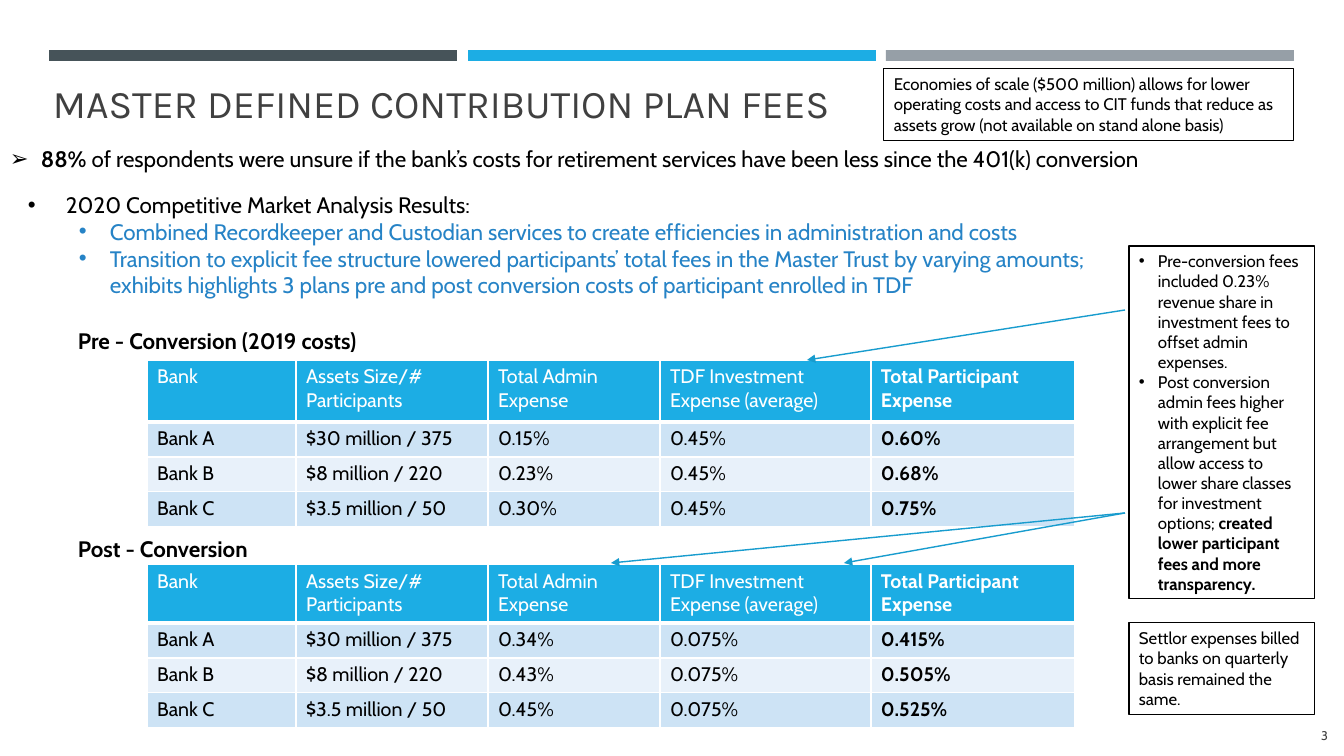
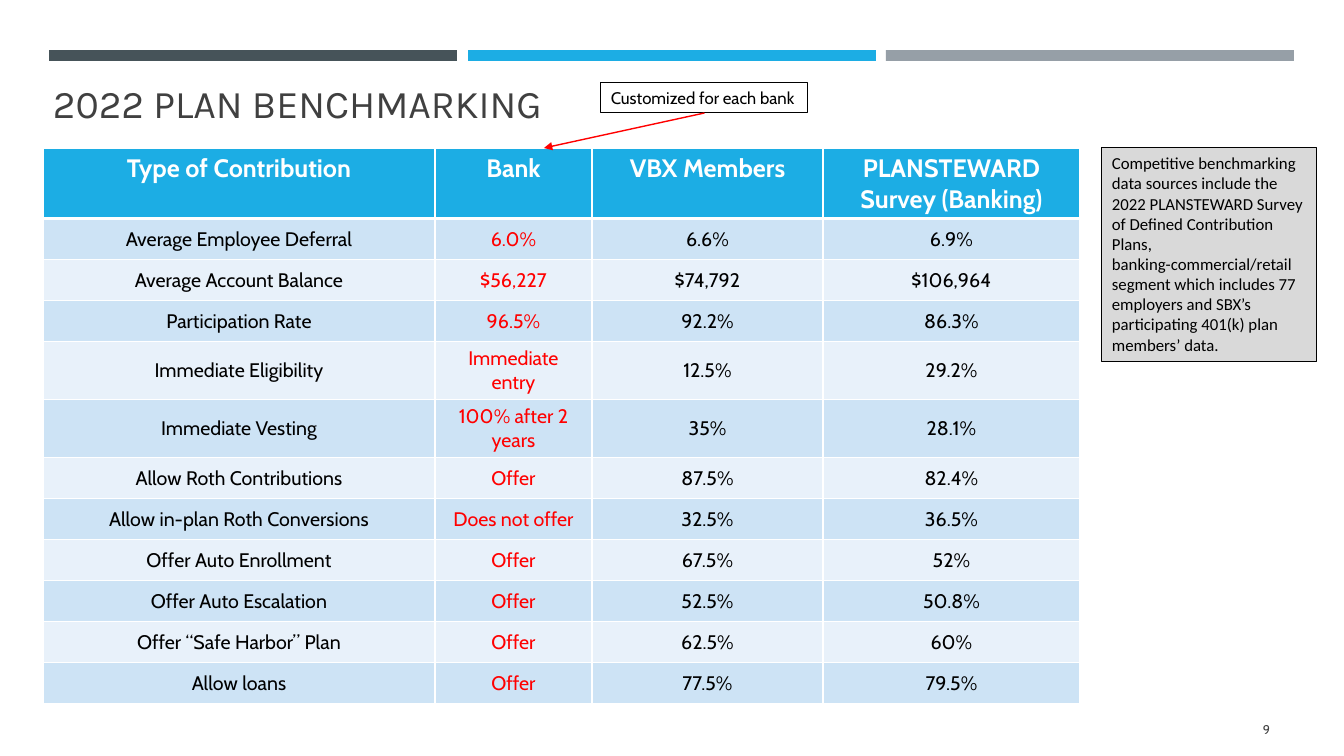
from lxml.etree import SubElement
from pptx import Presentation
from pptx.dml.color import RGBColor
from pptx.enum.shapes import MSO_CONNECTOR, MSO_SHAPE
from pptx.enum.text import MSO_ANCHOR, PP_ALIGN
from pptx.oxml.ns import qn
from pptx.util import Emu, Pt

PX = 914400 / 100.8
BLACK, WHITE, GREY, RED = "000000", "FFFFFF", "404040", "FF0000"
ACCENT, LINK, ARROW, NOTE = "1CADE4", "2683C6", "189CCE", "D9D9D9"
STRIPES = ("CDE3F5", "E8F1FA")
BANDS = [("465359", 49), (ACCENT, 468), ("969FA7", 886)]

# A paragraph is a list of (text, bold) runs plus optional format values.
SURVEY = [dict(runs=[("88% ", True), ("of respondents were unsure if the bank’s costs for retirement "
                                      "services have been less since the 401(k) conversion", False)],
               bullet="➢", left=31, hang=31)]
SUB = dict(bullet="•", left=82, hang=31, color=LINK)
RESULTS = [
    dict(runs=[("2020 Competitive Market Analysis Results:", False)], bullet="•", left=38, hang=38),
    dict(runs=[("Combined Recordkeeper and Custodian services to create efficiencies in "
                "administration and costs", False)], **SUB),
    dict(runs=[("Transition to explicit fee structure lowered participants’ total fees in the Master "
                "Trust by varying amounts; exhibits highlights 3 plans pre and post conversion costs "
                "of participant enrolled in TDF", False)], **SUB),
]
SCALE_NOTE = [dict(runs=[("Economies of scale ($500 million) allows for lower operating costs and access "
                          "to CIT funds that reduce as assets grow (not available on stand alone basis)",
                          False)])]
POINT = dict(bullet="•", left=19, hang=19)
FEE_NOTE = [
    dict(runs=[("Pre-conversion fees included 0.23% revenue share in investment fees to offset admin "
                "expenses.", False)], **POINT),
    dict(runs=[("Post conversion admin fees higher with explicit fee arrangement but allow access to "
                "lower share classes for investment options; ", False),
               ("created lower participant fees and more transparency.", True)], **POINT),
]
SETTLOR_NOTE = [dict(runs=[("Settlor expenses billed to banks on quarterly basis remained the same.", False)])]

FEE_HEAD = ("Bank", "Assets Size/# Participants", "Total Admin Expense",
            "TDF Investment Expense (average)", "Total Participant Expense")
FEE_COLS = (149, 192, 172, 211, 204)
BANKS = [("Bank A", "$30 million / 375"), ("Bank B", "$8 million / 220"), ("Bank C", "$3.5 million / 50")]
# heading, heading top, table top, header height, costs per bank
FEE_TABLES = [
    ("Pre - Conversion (2019 costs)", 322, 360, 62,
     [("0.15%", "0.45%", "0.60%"), ("0.23%", "0.45%", "0.68%"), ("0.30%", "0.45%", "0.75%")]),
    ("Post - Conversion", 530, 564, 59,
     [("0.34%", "0.075%", "0.415%"), ("0.43%", "0.075%", "0.505%"), ("0.45%", "0.075%", "0.525%")]),
]
FEE_ARROWS = [((1125, 310), (807, 360)), ((1125, 513), (611, 563)), ((1125, 513), (844, 563))]

BENCHMARKS = [
    ("Type of Contribution", "Bank", "VBX Members", "PLANSTEWARD Survey (Banking)"),
    ("Average Employee Deferral", "6.0%", "6.6%", "6.9%"),
    ("Average Account Balance", "$56,227", "$74,792", "$106,964"),
    ("Participation Rate", "96.5%", "92.2%", "86.3%"),
    ("Immediate Eligibility", "Immediate entry", "12.5%", "29.2%"),
    ("Immediate Vesting", "100% after 2 years", "35%", "28.1%"),
    ("Allow Roth Contributions", "Offer", "87.5%", "82.4%"),
    ("Allow in-plan Roth Conversions", "Does not offer", "32.5%", "36.5%"),
    ("Offer Auto Enrollment", "Offer", "67.5%", "52%"),
    ("Offer Auto Escalation", "Offer", "52.5%", "50.8%"),
    ("Offer “Safe Harbor” Plan", "Offer", "62.5%", "60%"),
    ("Allow loans", "Offer", "77.5%", "79.5%"),
]
BENCH_COLS = (392, 157, 231, 257)
BENCH_ROWS = [70] + [41] * 3 + [58] * 2 + [41] * 6
SOURCE_NOTE = [dict(runs=[("Competitive benchmarking data sources include the 2022 PLANSTEWARD Survey of "
                           "Defined Contribution Plans, banking-commercial/retail segment which includes "
                           "77 employers and SBX’s participating 401(k) plan members’ data.", False)])]
CUSTOM_NOTE = [dict(runs=[("Customized for each bank", False)])]


def px(n):
    return Emu(round(n * PX))


def rgb(value):
    return RGBColor.from_string(value)


def paint(target, color):
    target.fill.solid()
    target.fill.fore_color.rgb = rgb(color)


def set_bullet(p, char, left, hang):
    pPr = p._p.get_or_add_pPr()
    pPr.set("marL", str(px(left)))
    pPr.set("indent", str(-px(hang)))
    SubElement(pPr, qn("a:buFont")).set("typeface", "Arial")
    SubElement(pPr, qn("a:buChar")).set("char", char)


def add_run(p, text, size, color=BLACK, bold=False, font="Cabin"):
    r = p.add_run()
    r.text = text
    for name, value in dict(name=font, size=Pt(size), bold=bold).items():
        setattr(r.font, name, value)
    r.font.color.rgb = rgb(color)


def write(tf, paragraphs, size, font="Cabin", color=BLACK, align=PP_ALIGN.LEFT,
          anchor=MSO_ANCHOR.TOP, wrap=True):
    tf.word_wrap = wrap
    tf.vertical_anchor = anchor
    for i, item in enumerate(paragraphs):
        p = tf.paragraphs[0] if i == 0 else tf.add_paragraph()
        p.alignment = align
        if "bullet" in item:
            set_bullet(p, item["bullet"], item["left"], item["hang"])
        for text, bold in item["runs"]:
            add_run(p, text, size, item.get("color", color), bold, font)


def add_text(s, box, paragraphs, size, **fmt):
    write(s.shapes.add_textbox(*map(px, box)).text_frame, paragraphs, size, **fmt)


def add_rect(s, box, fill=None, line=None):
    sp = s.shapes.add_shape(MSO_SHAPE.RECTANGLE, *map(px, box))
    sp.shadow.inherit = False
    if fill:
        paint(sp, fill)
    else:
        sp.fill.background()
    if line:
        sp.line.color.rgb = rgb(line)
        sp.line.width = Pt(0.75)
    else:
        sp.line.fill.background()
    return sp


def add_note(s, box, paragraphs, fill=None, **fmt):
    sp = add_rect(s, box, fill, BLACK)
    write(sp.text_frame, paragraphs, 12, **fmt)
    return sp


def add_arrow(s, start, end, color):
    c = s.shapes.add_connector(MSO_CONNECTOR.STRAIGHT, *map(px, start + end))
    c.line.color.rgb = rgb(color)
    c.line.width = Pt(1)
    SubElement(c.line._get_or_add_ln(), qn("a:tailEnd")).set("type", "triangle")
    SubElement(c._element.spPr, qn("a:effectLst"))
    return c


def set_borders(cell, bottom):
    tcPr = cell._tc.get_or_add_tcPr()
    for side, width in (("L", 1), ("R", 1), ("T", 1), ("B", bottom)):
        ln = SubElement(tcPr, qn("a:ln" + side), w=str(Pt(width)))
        SubElement(SubElement(ln, qn("a:solidFill")), qn("a:srgbClr")).set("val", WHITE)


def add_grid(s, left, top, cols, heights, rows, cell_format):
    """Add a table; cell_format(row, column) gives the text format of a cell."""
    box = map(px, (left, top, sum(cols), sum(heights)))
    table = s.shapes.add_table(len(rows), len(cols), *box).table
    for column, width in zip(table.columns, cols):
        column.width = px(width)
    for i, row in enumerate(rows):
        table.rows[i].height = px(heights[i])
        for j, text in enumerate(row):
            cell = table.cell(i, j)
            fmt = cell_format(i, j)
            set_borders(cell, 1 if i else 3)
            paint(cell, STRIPES[(i - 1) % 2] if i else ACCENT)
            cell.vertical_anchor = fmt.pop("anchor", MSO_ANCHOR.TOP)
            p = cell.text_frame.paragraphs[0]
            p.alignment = fmt.pop("align", PP_ALIGN.LEFT)
            add_run(p, text, **fmt)


def fee_format(i, j):
    return dict(size=14, color=BLACK if i else WHITE, bold=j == len(FEE_COLS) - 1)


def bench_format(i, j):
    if i == 0:
        return dict(size=18, color=WHITE, bold=True, align=PP_ALIGN.CENTER)
    return dict(size=14, color=RED if j == 1 else BLACK, align=PP_ALIGN.CENTER, anchor=MSO_ANCHOR.MIDDLE)


def add_base(prs, title, number, number_at):
    """Add a slide with the bands, title and page number."""
    s = prs.slides.add_slide(prs.slide_layouts[6])
    for color, left in BANDS:
        add_rect(s, (left, 50, 408, 11), color)
    add_text(s, (43, 0, 1215, 131), [dict(runs=[(title, False)])], 28, font="Karla", color=GREY,
             anchor=MSO_ANCHOR.BOTTOM)
    add_text(s, (*number_at, 116, 40), [dict(runs=[(number, False)])], 9, color=GREY,
             align=PP_ALIGN.RIGHT, anchor=MSO_ANCHOR.MIDDLE)
    return s


def build_fees(prs):
    s = add_base(prs, "MASTER DEFINED CONTRIBUTION PLAN FEES", "3", (1222, 716))
    add_text(s, (0, 140, 1228, 37), SURVEY, 16)
    add_text(s, (18, 186, 1126, 118), RESULTS, 16)
    for heading, heading_top, top, head_height, costs in FEE_TABLES:
        add_text(s, (68, heading_top, 400, 37), [dict(runs=[(heading, True)])], 16)
        rows = [FEE_HEAD] + [bank + cost for bank, cost in zip(BANKS, costs)]
        add_grid(s, 147, top, FEE_COLS, [head_height] + [35] * len(BANKS), rows, fee_format)
    add_note(s, (884, 69, 410, 72), SCALE_NOTE)
    add_note(s, (1129, 246, 186, 353), FEE_NOTE)
    add_note(s, (1129, 623, 186, 92), SETTLOR_NOTE)
    for start, end in FEE_ARROWS:
        add_arrow(s, start, end, ARROW)


def build_benchmarks(prs):
    s = add_base(prs, "2022 PLAN BENCHMARKING", "9", (1164, 709))
    add_grid(s, 43, 148, BENCH_COLS, BENCH_ROWS, BENCHMARKS, bench_format)
    add_note(s, (1102, 148, 215, 214), SOURCE_NOTE, NOTE, font="Calibri")
    custom = add_note(s, (601, 83, 207, 30), CUSTOM_NOTE, wrap=False)
    add_arrow(s, (704, 113), (544, 148), RED).begin_connect(custom, 2)


def main():
    prs = Presentation()
    prs.slide_width, prs.slide_height = px(1344), px(756)
    build_fees(prs)
    build_benchmarks(prs)
    prs.save("out.pptx")


if __name__ == "__main__":
    main()
